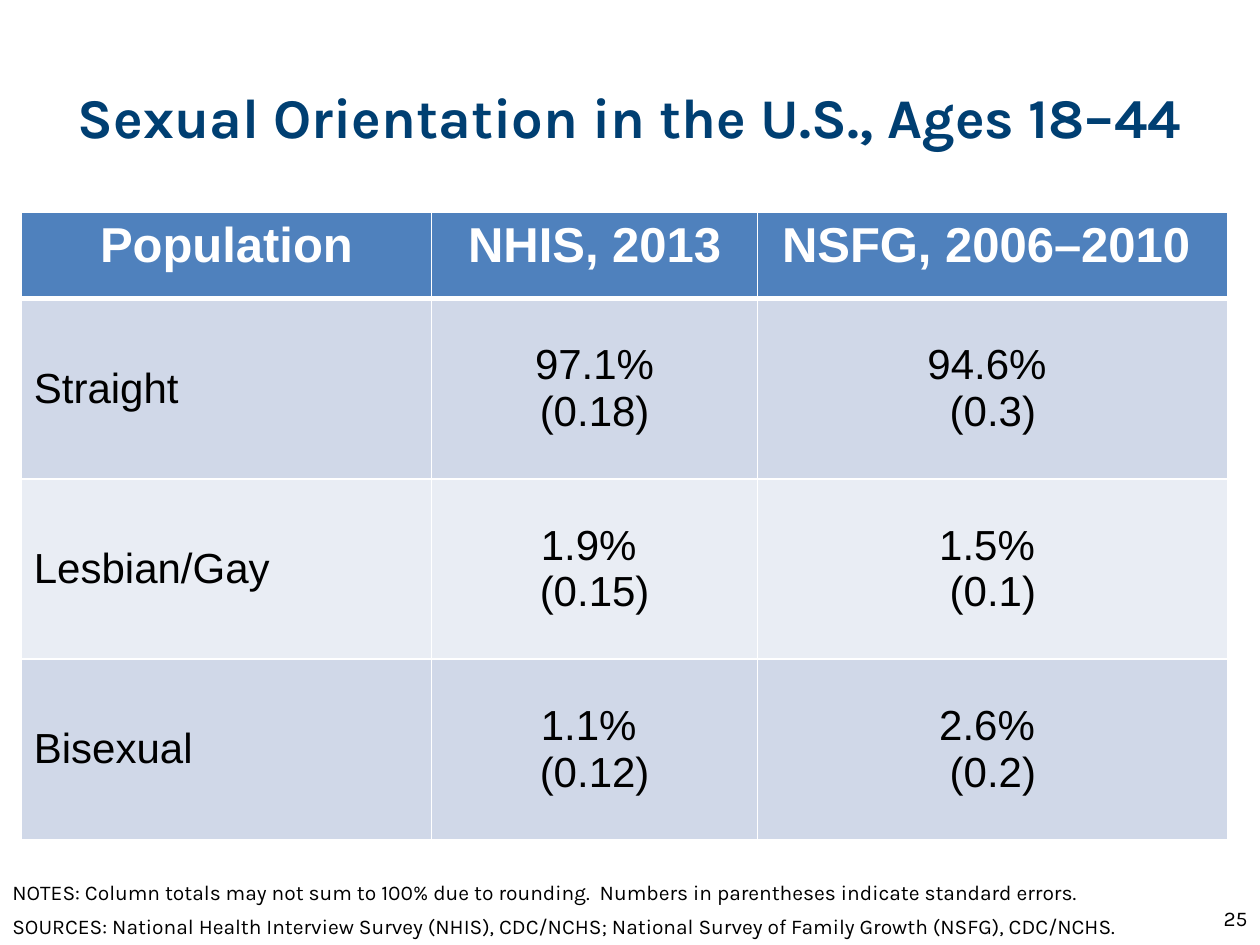
from lxml.etree import SubElement
from pptx import Presentation
from pptx.dml.color import RGBColor
from pptx.enum.text import MSO_ANCHOR, MSO_AUTO_SIZE, PP_ALIGN
from pptx.oxml.ns import qn
from pptx.util import Cm, Pt

NAVY = RGBColor(0x00, 0x3F, 0x72)
BLUE = RGBColor(0x4F, 0x81, 0xBD)
BANDS = RGBColor(0xD0, 0xD8, 0xE8), RGBColor(0xE9, 0xED, 0xF4)
WHITE = RGBColor(0xFF, 0xFF, 0xFF)
BLACK = RGBColor(0x00, 0x00, 0x00)

HEADS = ["Population", "NHIS, 2013", "NSFG, 2006–2010 "]
ROWS = [
    ["Straight", "97.1%\n(0.18)", "94.6% \n(0.3)"],
    ["Lesbian/Gay", "1.9% \n(0.15)", "1.5% \n(0.1)"],
    ["Bisexual", "1.1% \n(0.12)", "2.6% \n(0.2)"],
]
NOTES = [
    "NOTES: Column totals may not sum to 100% due to rounding.  "
    "Numbers in parentheses indicate standard errors.",
    "SOURCES: National Health Interview Survey (NHIS), CDC/NCHS; "
    "National Survey of Family Growth (NSFG), CDC/NCHS.",
]


def write(frame, text, size=12, font="Karla", color=BLACK, bold=False,
          align=PP_ALIGN.LEFT):
    """Fill a text frame with one paragraph per line in the given format."""
    frame.text = text
    frame.word_wrap = True
    for para in frame.paragraphs:
        para.alignment = align
        for run in para.runs:
            run.font.size = Pt(size)
            run.font.name = font
            run.font.bold = bold
            run.font.color.rgb = color


def add_text(slide, box, text, anchor=MSO_ANCHOR.TOP, **style):
    """Add a text box at the given left, top, width and height."""
    frame = slide.shapes.add_textbox(*map(Cm, box)).text_frame
    frame.vertical_anchor = anchor
    write(frame, text, **style)


def add_title(slide, box, text):
    """Move the title placeholder into the box and format it."""
    title = slide.shapes.title
    title.left, title.top, title.width, title.height = map(Cm, box)
    frame = title.text_frame
    frame.auto_size = MSO_AUTO_SIZE.NONE
    frame.vertical_anchor = MSO_ANCHOR.MIDDLE
    write(frame, text, size=32, color=NAVY, bold=True, align=PP_ALIGN.CENTER)


def set_edges(cell, **widths):
    """Draw white cell borders, with widths in points by side."""
    props = cell._tc.get_or_add_tcPr()
    for spot, side in enumerate("LRTB"):
        line = SubElement(props, qn(f"a:ln{side}"), w=str(Pt(widths.get(side, 1))))
        fill = SubElement(line, qn("a:solidFill"))
        SubElement(fill, qn("a:srgbClr"), val=str(WHITE))
        props.insert(spot, line)


def add_grid(slide, box):
    """Add the survey table with a header row and banded body rows."""
    left, top, width, height = box
    head = 1.75
    shape = slide.shapes.add_table(len(ROWS) + 1, len(HEADS), *map(Cm, box))
    table = shape.table
    for col, share in zip(table.columns, (0.34, 0.27, 0.39)):
        col.width = Cm(width * share)
    for i, texts in enumerate([HEADS] + ROWS):
        table.rows[i].height = Cm((height - head) / len(ROWS) if i else head)
        for j, text in enumerate(texts):
            cell = table.cell(i, j)
            cell.fill.solid()
            cell.fill.fore_color.rgb = BANDS[(i - 1) % 2] if i else BLUE
            cell.vertical_anchor = MSO_ANCHOR.MIDDLE if i else MSO_ANCHOR.TOP
            write(cell.text_frame, text, font="Arial", size=24 if i else 28,
                  color=BLACK if i else WHITE, bold=not i,
                  align=PP_ALIGN.LEFT if i and not j else PP_ALIGN.CENTER)
            set_edges(cell, T=3 if i == 1 else 1, B=1 if i else 3)


def add_notes(slide, box):
    """Stack the note lines evenly in the box."""
    left, top, width, height = box
    step = height / len(NOTES)
    for i, text in enumerate(NOTES):
        add_text(slide, (left, top + i * step, width, step), text)


def main():
    """Build and save the slide."""
    deck = Presentation()
    deck.slide_width, deck.slide_height = Cm(25.4), Cm(19.05)
    slide = deck.slides.add_slide(deck.slide_layouts[5])
    add_title(slide, (0, 0.76, 25.4, 3.18),
              "Sexual Orientation in the U.S., Ages 18–44")
    add_text(slide, (24.13, 17.96, 1.27, 1.09), "25",
             anchor=MSO_ANCHOR.MIDDLE, align=PP_ALIGN.RIGHT)
    add_grid(slide, (0.43, 4.27, 24.33, 12.65))
    add_notes(slide, (0, 17.6, 24.77, 1.38))
    deck.save("out.pptx")


if __name__ == "__main__":
    main()
